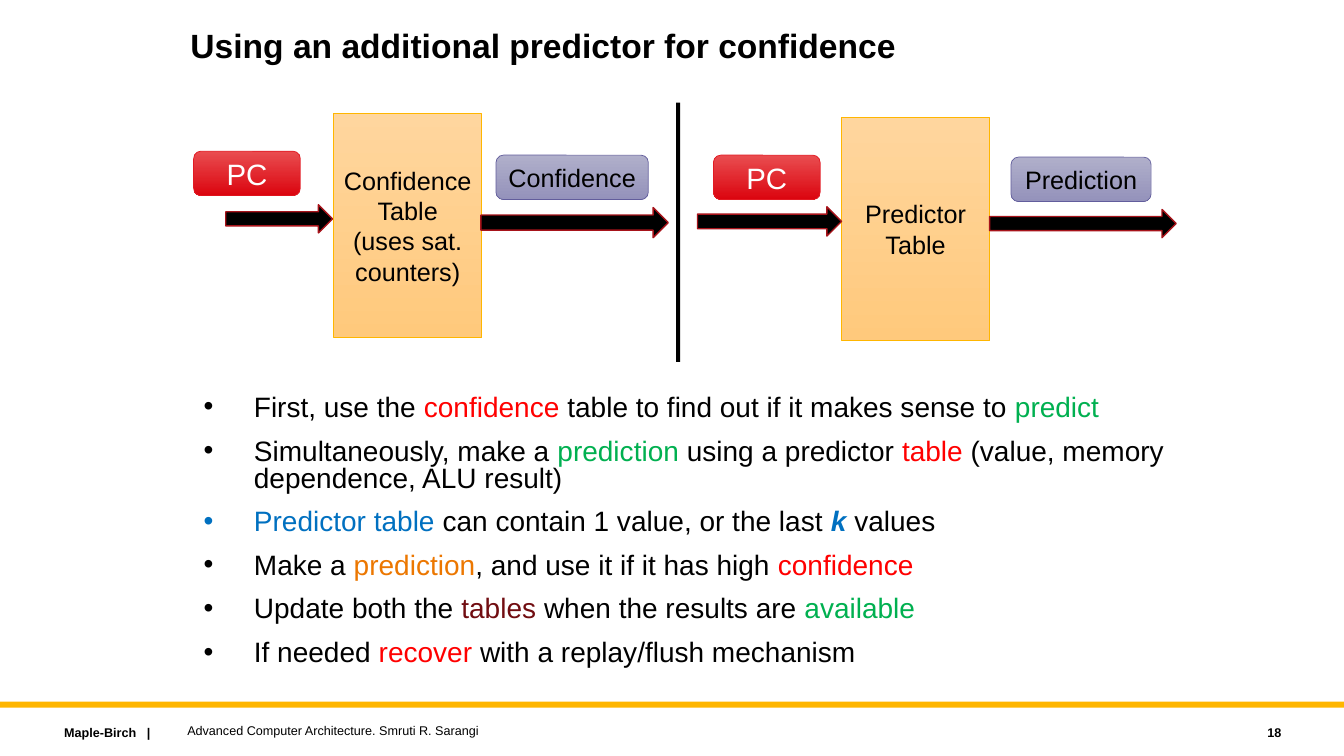
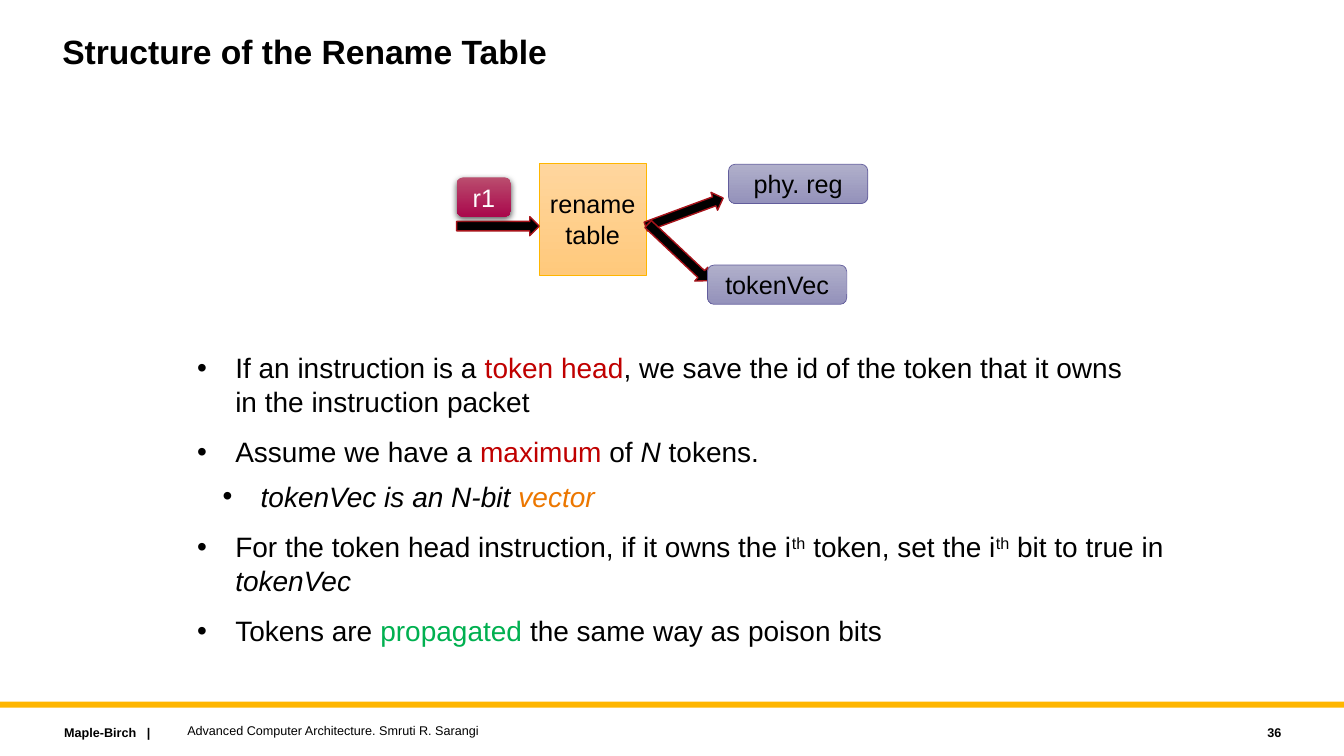
from lxml import etree
from pptx import Presentation
from pptx.dml.color import RGBColor
from pptx.enum import shapes, text
from pptx.oxml import ns
from pptx.util import Cm, Pt

BLACK = RGBColor(0x00, 0x00, 0x00)
WHITE = RGBColor(0xFF, 0xFF, 0xFF)
GOLD = RGBColor(0xFF, 0xB6, 0x00)
RED = RGBColor(0xFF, 0x00, 0x00)
DARK_RED = RGBColor(0xC0, 0x00, 0x00)
MAROON = RGBColor(0x71, 0x0D, 0x11)
GREEN = RGBColor(0x00, 0xB0, 0x50)
BLUE = RGBColor(0x00, 0x70, 0xC0)
ORANGE = RGBColor(0xEC, 0x77, 0x00)
ARROW_EDGE = RGBColor(0xA7, 0x13, 0x1A)
RED_EDGE = RGBColor(0xE2, 0x1A, 0x23)
PURPLE_EDGE = RGBColor(0x62, 0x5D, 0x9C)

# Gradients from top to bottom
AMBER = (RGBColor(0xFF, 0xD6, 0x9E), RGBColor(0xFF, 0xC9, 0x7C))
SCARLET = (RGBColor(0xE9, 0x4D, 0x50), RGBColor(0xDB, 0x05, 0x0F))
PURPLE = (RGBColor(0xB0, 0xAF, 0xCA), RGBColor(0x94, 0x92, 0xBB))
CRIMSON = (RGBColor(0xBA, 0x4D, 0x6E), RGBColor(0xA9, 0x08, 0x4C))

RECT = shapes.MSO_SHAPE.RECTANGLE
ROUNDED = shapes.MSO_SHAPE.ROUNDED_RECTANGLE
ARROW = shapes.MSO_SHAPE.RIGHT_ARROW
CENTER = text.PP_ALIGN.CENTER
RIGHT = text.PP_ALIGN.RIGHT
MIDDLE = text.MSO_ANCHOR.MIDDLE


def write(frame, runs, size=18, color=BLACK, bold=False, align=None, spacing=None,
          before=0, indent=None, hanging=0, level=0, tab=None):
    """Add one paragraph; runs is a string or a list of strings and (string, format) pairs."""
    paragraph = frame.paragraphs[0]
    if paragraph.runs:
        paragraph = frame.add_paragraph()
        paragraph.space_before = Pt(before)
    paragraph.alignment = align
    paragraph.level = level
    if spacing:
        paragraph.line_spacing = spacing
    properties = paragraph._p.get_or_add_pPr()
    if indent:
        properties.set("marL", str(Cm(indent)))
        properties.set("indent", str(-Cm(hanging)))
        etree.SubElement(properties, ns.qn("a:buFont")).set("typeface", "Arial")
        etree.SubElement(properties, ns.qn("a:buChar")).set("char", "•")
    if tab:
        stops = etree.SubElement(properties, ns.qn("a:tabLst"))
        etree.SubElement(stops, ns.qn("a:tab"), pos=str(Cm(tab)), algn="l")
    for item in [runs] if isinstance(runs, str) else runs:
        words, style = (item, {}) if isinstance(item, str) else item
        for number, line in enumerate(words.split("\n")):
            if number:
                paragraph.add_line_break()
            run = paragraph.add_run()
            run.text = line
            font = run.font
            font.name = "Arial"
            font.size = Pt(size)
            font.bold = style.get("bold", bold)
            font.italic = style.get("italic", False)
            font.color.rgb = style.get("color", color)
            if style.get("superscript"):
                font._element.set("baseline", "30000")


def add_part(slide, box, kind=None, fill=None, edge=None, edge_width=0.5, anchor=None):
    """Add a preset shape, or a text box when kind is None; box is in centimetres."""
    place = [Cm(length) for length in box]
    if kind is None:
        part = slide.shapes.add_textbox(*place)
    else:
        part = slide.shapes.add_shape(kind, *place)
        part.shadow.inherit = False
        if isinstance(fill, RGBColor):
            part.fill.solid()
            part.fill.fore_color.rgb = fill
        else:
            part.fill.gradient()
            part.fill.gradient_angle = 270
            for stop, shade in zip(part.fill.gradient_stops, fill):
                stop.color.rgb = shade
        if edge:
            part.line.color.rgb = edge
            part.line.width = Pt(edge_width)
        else:
            part.line.fill.background()
        part.text_frame.margin_left = part.text_frame.margin_right = Cm(0.1)
    part.text_frame.word_wrap = True
    if anchor is not None:
        part.text_frame.vertical_anchor = anchor
    return part


deck = Presentation()
deck.slide_width, deck.slide_height = Cm(33.87), Cm(19.05)

# Title, gold band and footer of both slides
pages = []
for page_number, title, title_box in [
    ("18", "Using an additional predictor for confidence", (4.55, 0.61, 21.89, 2.77)),
    ("36", "Structure of the Rename Table", (1.32, 0.76, 25.4, 2.29)),
]:
    page = deck.slides.add_slide(deck.slide_layouts[6])
    pages.append(page)
    add_part(page, (0, 17.68, 33.87, 0.15), RECT, GOLD)
    publisher = add_part(page, (1.37, 18.14, 5.77, 0.64))
    write(publisher.text_frame, "Maple-Birch\t|", size=9, bold=True, tab=2.08)
    heading = add_part(page, title_box)
    write(heading.text_frame, title, size=24, bold=True, spacing=0.9)
    folio = add_part(page, (28.98, 18.14, 3.56, 0.64), anchor=MIDDLE)
    write(folio.text_frame, page_number, size=9, bold=True, align=RIGHT)
    credit = add_part(page, (4.47, 18.08, 20.32, 0.64), anchor=MIDDLE)
    write(credit.text_frame, "Advanced Computer Architecture. Smruti R. Sarangi", size=9)

confidence_page, rename_page = pages

# Tables
for page, box, lines in [
    (confidence_page, (8.41, 2.87, 3.73, 5.64), ["Confidence", "Table", "(uses sat. counters)"]),
    (confidence_page, (21.21, 2.95, 3.73, 5.64), ["Predictor", "Table"]),
    (rename_page, (13.59, 4.11, 2.69, 2.82), ["rename", "table"]),
]:
    table = add_part(page, box, RECT, AMBER, GOLD, anchor=MIDDLE)
    for line in lines:
        write(table.text_frame, line, align=CENTER)

# Arrows
for page, box, angle in [
    (confidence_page, (5.69, 5.16, 2.69, 0.71), 0),
    (confidence_page, (12.12, 5.23, 4.72, 0.76), 0),
    (confidence_page, (17.58, 5.21, 3.63, 0.74), 0),
    (confidence_page, (24.94, 5.28, 4.7, 0.71), 0),
    (rename_page, (11.51, 5.46, 2.08, 0.48), 0),
    (rename_page, (16.21, 5.11, 2.08, 0.48), -20.3),
    (rename_page, (16.05, 6.12, 2.08, 0.48), 43.3),
]:
    add_part(page, box, ARROW, BLACK, ARROW_EDGE, 1).rotation = angle

# Inputs and outputs
for page, box, label, fill, edge, color, size in [
    (confidence_page, (4.88, 3.81, 2.69, 1.12), "PC", SCARLET, RED_EDGE, WHITE, 21),
    (confidence_page, (12.5, 3.91, 3.84, 1.12), "Confidence", PURPLE, PURPLE_EDGE, BLACK, 18),
    (confidence_page, (17.98, 3.91, 2.69, 1.12), "PC", SCARLET, RED_EDGE, WHITE, 21),
    (confidence_page, (25.48, 3.96, 3.53, 1.12), "Prediction", PURPLE, PURPLE_EDGE, BLACK, 18),
    (rename_page, (18.36, 4.14, 3.51, 0.99), "phy. reg", PURPLE, PURPLE_EDGE, BLACK, 18),
    (rename_page, (17.83, 6.68, 3.51, 0.99), "tokenVec", PURPLE, PURPLE_EDGE, BLACK, 18),
    (rename_page, (11.51, 4.47, 1.37, 0.99), "r1", CRIMSON, None, WHITE, 18),
]:
    signal = add_part(page, box, ROUNDED, fill, edge, anchor=MIDDLE)
    write(signal.text_frame, label, size=size, color=color, align=CENTER)
    if label == "r1":
        effects = signal._element.spPr.find(ns.qn("a:effectLst"))
        shadow = etree.SubElement(effects, ns.qn("a:outerShdw"), blurRad=str(Pt(4.5)),
                                  dist=str(Pt(1.5)), dir="5400000", rotWithShape="0")
        shade = etree.SubElement(shadow, ns.qn("a:srgbClr"), val=str(BLACK))
        etree.SubElement(shade, ns.qn("a:alpha"), val="63000")

add_part(confidence_page, (17.04, 2.59, 0.1, 6.53), RECT, BLACK)

# Explanations
steps = add_part(confidence_page, (4.88, 9.86, 24.77, 8.13))
for runs in [
    ["First, use the ", ("confidence", {"color": RED}),
     " table to find out if it makes sense to ", ("predict", {"color": GREEN})],
    ["Simultaneously, make a ", ("prediction", {"color": GREEN}), " using a predictor ",
     ("table", {"color": RED}), " (value, memory dependence, ALU result)"],
    [("Predictor table ", {"color": BLUE}), "can contain 1 value, or the last ",
     ("k ", {"color": BLUE, "bold": True, "italic": True}), "values"],
    ["Make a ", ("prediction", {"color": ORANGE}), ", and use it if it has high ",
     ("confidence", {"color": RED})],
    ["Update both the ", ("tables", {"color": MAROON}), " when the results are ",
     ("available", {"color": GREEN})],
    ["If needed ", ("recover", {"color": RED}), " with a replay/flush mechanism"],
]:
    write(steps.text_frame, runs, size=20, spacing=Pt(19.2), before=12,
          indent=1.27, hanging=1.27)

token_rules = add_part(rename_page, (4.72, 8.71, 25.02, 8.08))
for level, runs in [
    (0, ["If an instruction is a ", ("token head", {"color": DARK_RED}),
         ", we save the id of the token that it owns\nin the instruction packet"]),
    (0, ["Assume we have a ", ("maximum", {"color": DARK_RED}), " of ",
         ("N", {"italic": True}), " tokens."]),
    (1, [("tokenVec is an N-bit ", {"italic": True}),
         ("vector", {"italic": True, "color": ORANGE})]),
    (0, ["For the token head instruction, if it owns the i", ("th", {"superscript": True}),
         " token, set the i", ("th", {"superscript": True}), " bit to true in ",
         ("tokenVec", {"italic": True})]),
    (0, ["Tokens are ", ("propagated", {"color": GREEN}), " the same way as poison bits"]),
]:
    write(token_rules.text_frame, runs, size=20, spacing=Pt(24), before=12 - 4 * level,
          indent=0.96 + 0.64 * level, hanging=0.96, level=level)

deck.save("out.pptx")
